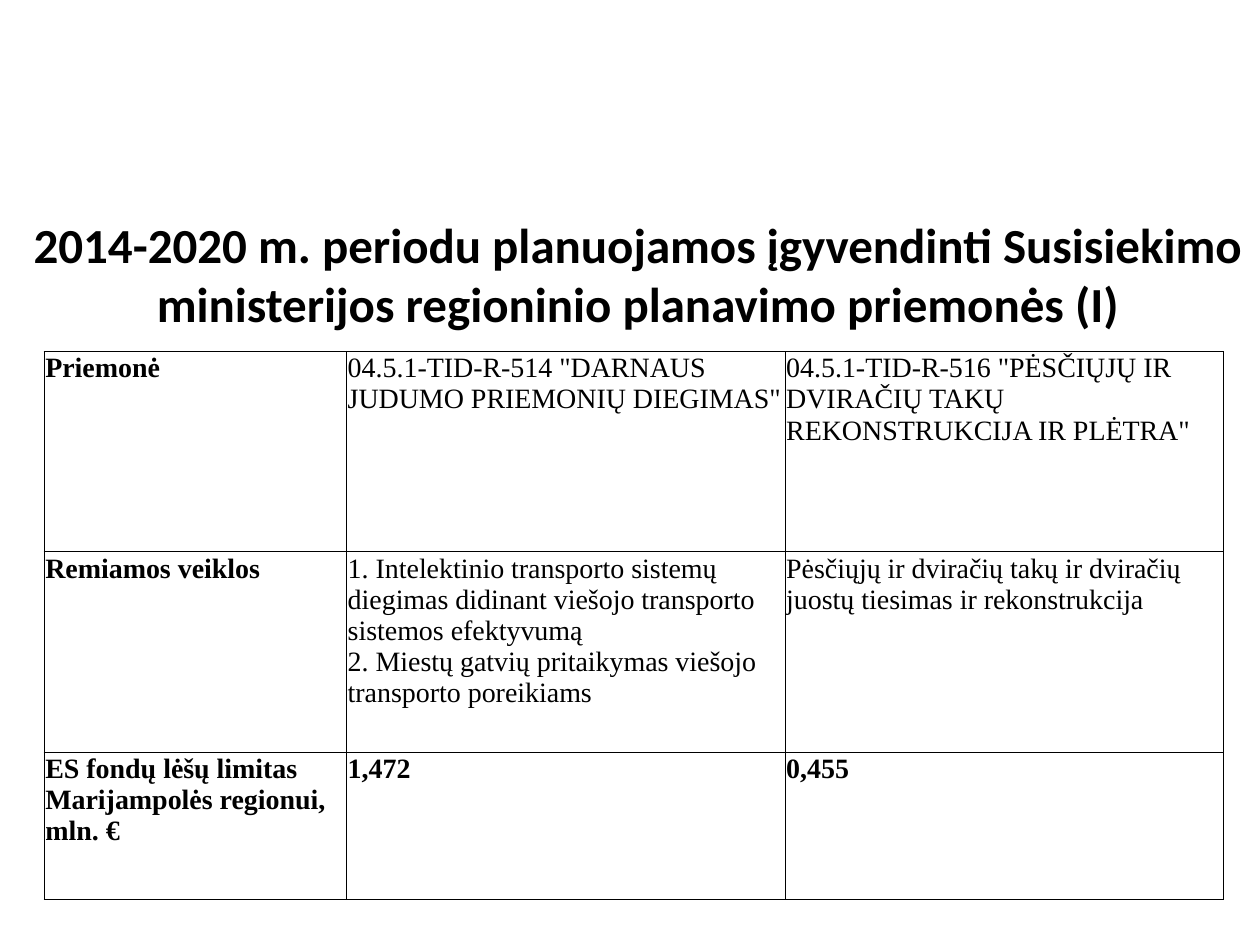
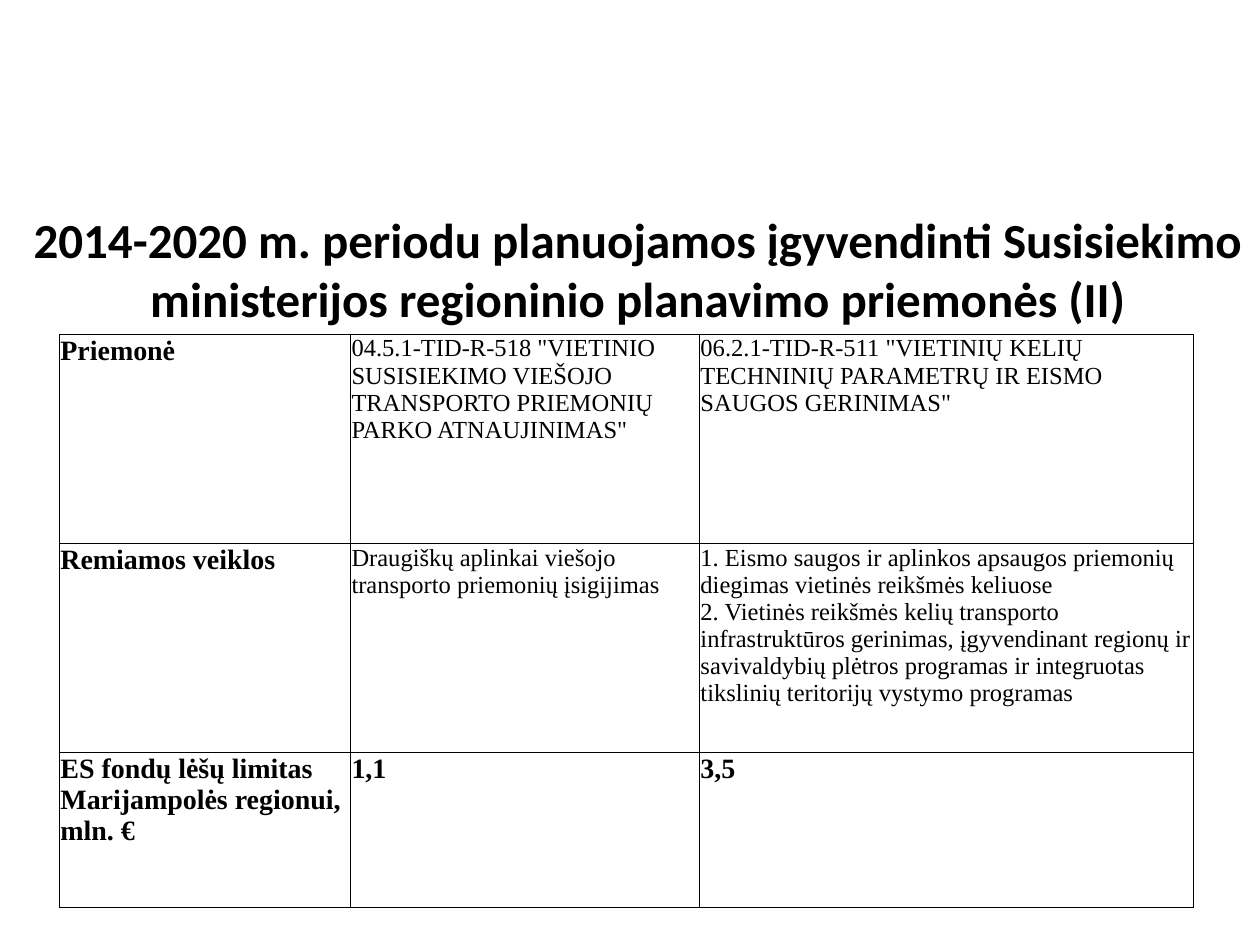
from copy import deepcopy

from lxml import etree
from pptx import Presentation
from pptx.dml.color import RGBColor
from pptx.enum import text
from pptx.oxml import ns
from pptx.util import Inches, Pt

COLORS = {"ink": "000000", "paper": "FFFFFF"}
TITLE_FONT = {"name": "Calibri", "size": Pt(28), "bold": True}
LABEL_FONT = {"name": "Times New Roman", "size": Pt(16), "bold": True}
CELL_MARGINS = {"margin_left": Inches(0.01), "margin_right": Inches(0.01),
                "margin_top": Inches(0.01), "margin_bottom": 0}
TITLE = ("2014-2020 m. periodu planuojamos įgyvendinti Susisiekimo "
         "ministerijos regioninio planavimo priemonės ({})")
ROW_LABELS = ["Priemonė", "Remiamos veiklos",
              "ES fondų lėšų limitas Marijampolės regionui, mln. €"]

MEASURE_SLIDES = [
    {
        "number": "I", "title_top": 1.55, "title_height": 1.24,
        "table_at": (0.35, 2.79), "columns": [2.4, 3.48, 3.48],
        "rows": [1.59, 1.59, 1.17], "body_size": 16,
        "measures": [
            ('04.5.1-TID-R-514 "DARNAUS JUDUMO PRIEMONIŲ DIEGIMAS"',
             "1. Intelektinio transporto sistemų diegimas didinant viešojo "
             "transporto sistemos efektyvumą\n"
             "2. Miestų gatvių pritaikymas viešojo transporto poreikiams",
             "1,472"),
            ('04.5.1-TID-R-516 "PĖSČIŲJŲ IR DVIRAČIŲ TAKŲ REKONSTRUKCIJA IR PLĖTRA"',
             "Pėsčiųjų ir dviračių takų ir dviračių juostų tiesimas ir rekonstrukcija",
             "0,455"),
        ],
    },
    {
        "number": "II", "title_top": 1.78, "title_height": 0.7,
        "table_at": (0.47, 2.65), "columns": [2.31, 2.77, 3.92],
        "rows": [1.66, 1.66, 1.23], "body_size": 14,
        "measures": [
            ('04.5.1-TID-R-518 "VIETINIO SUSISIEKIMO VIEŠOJO TRANSPORTO '
             'PRIEMONIŲ PARKO ATNAUJINIMAS"',
             "Draugiškų aplinkai viešojo transporto priemonių įsigijimas",
             "1,1"),
            ('06.2.1-TID-R-511 "VIETINIŲ KELIŲ TECHNINIŲ PARAMETRŲ IR EISMO '
             'SAUGOS GERINIMAS"',
             "1. Eismo saugos ir aplinkos apsaugos priemonių diegimas vietinės "
             "reikšmės keliuose\n"
             "2. Vietinės reikšmės kelių transporto infrastruktūros gerinimas, "
             "įgyvendinant regionų ir savivaldybių plėtros programas ir "
             "integruotas tikslinių teritorijų vystymo programas",
             "3,5"),
        ],
    },
]


def apply(target, formats):
    for name, value in formats.items():
        setattr(target, name, value)


def write(paragraph, words, font):
    paragraph.text = words
    for run in paragraph.runs:
        apply(run.font, font)
        run.font.color.rgb = RGBColor.from_string(COLORS["ink"])
    for line_break in paragraph._p.findall(ns.qn("a:br")):
        line_break.insert(0, deepcopy(paragraph.runs[0]._r.rPr))


def add_title(slide, top, height, words):
    title = slide.shapes.add_textbox(Inches(0.12), Inches(top),
                                     Inches(9.88), Inches(height))
    apply(title.text_frame, {"word_wrap": True,
                             "vertical_anchor": text.MSO_ANCHOR.MIDDLE})
    heading = title.text_frame.paragraphs[0]
    heading.alignment = text.PP_ALIGN.CENTER
    write(heading, words, TITLE_FONT)


def add_borders(cell):
    properties = cell._tc.get_or_add_tcPr()
    for position, side in enumerate(("lnL", "lnR", "lnT", "lnB")):
        line = etree.Element(ns.qn(f"a:{side}"), w=str(Pt(0.5)))
        fill = etree.SubElement(line, ns.qn("a:solidFill"))
        etree.SubElement(fill, ns.qn("a:srgbClr"), val=COLORS["ink"])
        properties.insert(position, line)


def add_measure_table(slide, content):
    columns, rows = content["columns"], content["rows"]
    left, top = content["table_at"]
    table = slide.shapes.add_table(len(rows), len(columns), Inches(left), Inches(top),
                                   Inches(sum(columns)), Inches(sum(rows))).table
    apply(table, {"first_row": False, "horz_banding": False})
    for column, width in zip(table.columns, columns):
        column.width = Inches(width)
    for row, height in zip(table.rows, rows):
        row.height = Inches(height)
    body_font = {**LABEL_FONT, "size": Pt(content["body_size"]), "bold": False}
    for c, entries in enumerate([ROW_LABELS, *content["measures"]]):
        for r, words in enumerate(entries):
            cell = table.cell(r, c)
            apply(cell, CELL_MARGINS)
            cell.fill.background()
            add_borders(cell)
            is_label = c == 0 or r == len(rows) - 1
            write(cell.text_frame.paragraphs[0], words,
                  LABEL_FONT if is_label else body_font)


def main():
    deck = Presentation()
    apply(deck, {"slide_width": Inches(10), "slide_height": Inches(7.5)})
    for content in MEASURE_SLIDES:
        slide = deck.slides.add_slide(deck.slide_layouts[6])
        slide.background.fill.solid()
        slide.background.fill.fore_color.rgb = RGBColor.from_string(COLORS["paper"])
        add_title(slide, content["title_top"], content["title_height"],
                  TITLE.format(content["number"]))
        add_measure_table(slide, content)
    deck.save("out.pptx")


if __name__ == "__main__":
    main()
